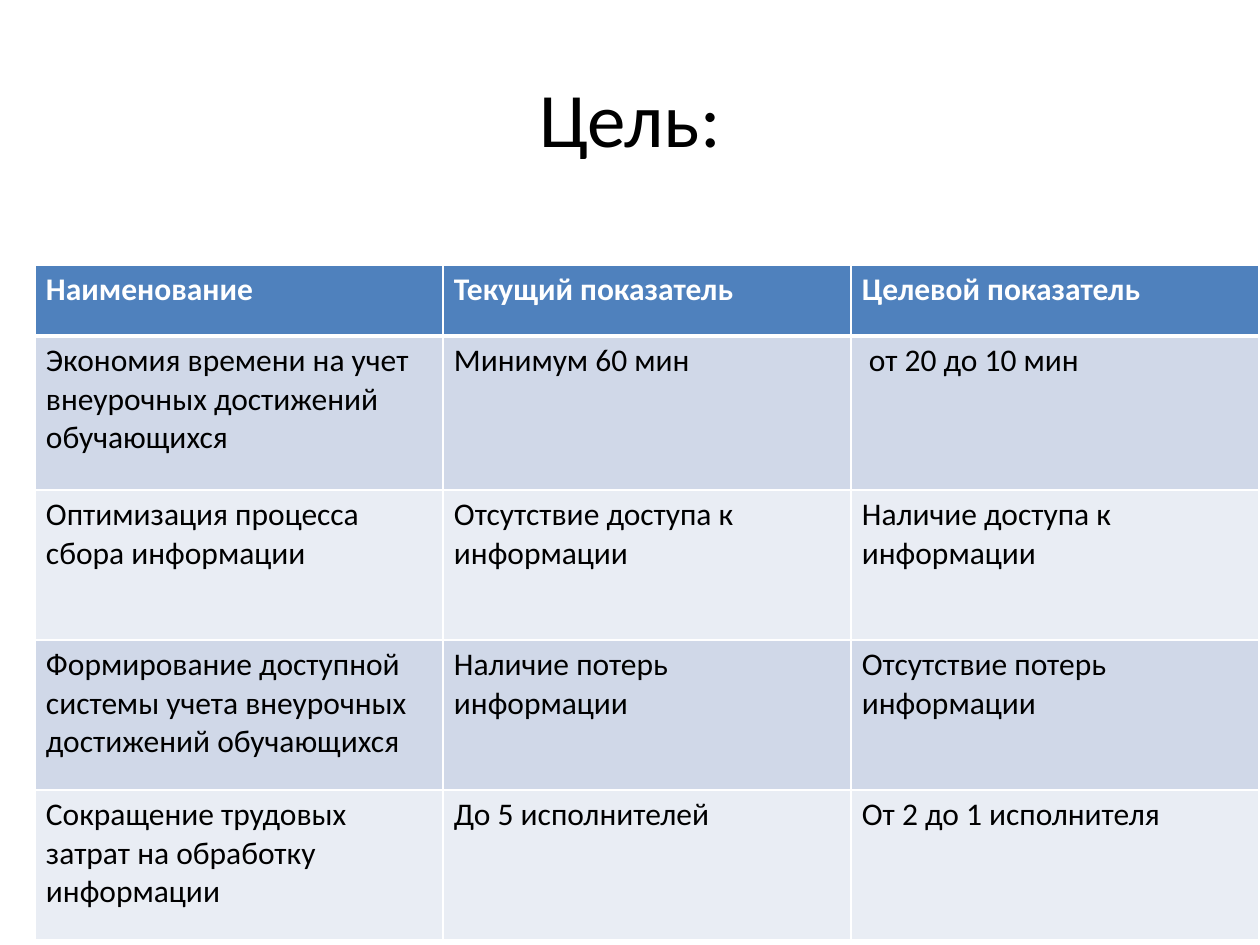
import pptx
import pptx.util
import pptx.dml.color
import pptx.enum.text
import pptx.oxml
import pptx.oxml.ns

TITLE = "Цель:"
GOALS = [
    ("Наименование", "Текущий показатель", "Целевой показатель"),
    ("Экономия времени на учет внеурочных достижений обучающихся",
     "Минимум 60 мин", " от 20 до 10 мин"),
    ("Оптимизация процесса сбора информации",
     "Отсутствие доступа к информации", "Наличие доступа к информации"),
    ("Формирование доступной системы учета внеурочных достижений обучающихся",
     "Наличие потерь информации", "Отсутствие потерь информации"),
    ("Сокращение трудовых затрат на обработку информации",
     "До 5 исполнителей", "От 2 до 1 исполнителя"),
]
TITLE_BOX = (63, 38, 1134, 158)
TABLE_LEFT, TABLE_TOP = 35, 265
COLUMN_WIDTH = 408
ROW_HEIGHTS = [71, 154, 150, 150, 150]
HEADER_FILL = "4F81BD"
BAND_FILLS = ["D0D8E8", "E9EDF4"]
WHITE, BLACK = "FFFFFF", "000000"
FONT = "Calibri"


def px(length):
    return pptx.util.Emu(round(length * 914400 / 126))


def color(value):
    return pptx.dml.color.RGBColor.from_string(value)


def format_text(text_frame, size, font_color, bold=False):
    for paragraph in text_frame.paragraphs:
        for run in paragraph.runs:
            run.font.name = FONT
            run.font.size = pptx.util.Pt(size)
            run.font.bold = bold
            run.font.color.rgb = color(font_color)


def add_border(cell, side, points):
    border = pptx.oxml.parse_xml(
        f'<a:ln{side} {pptx.oxml.ns.nsdecls("a")} w="{points * 12700}">'
        f'<a:solidFill><a:srgbClr val="{WHITE}"/></a:solidFill></a:ln{side}>')
    cell._tc.get_or_add_tcPr().append(border)


def fill_cell(cell, text, row):
    header = row == 0
    cell.text_frame.text = text
    format_text(cell.text_frame, 18, WHITE if header else BLACK, header)
    cell.margin_left = cell.margin_right = px(11)
    cell.margin_top = cell.margin_bottom = px(6)
    for side in "LRTB":
        under_header = (row, side) in [(0, "B"), (1, "T")]
        add_border(cell, side, 3 if under_header else 1)
    cell.fill.solid()
    cell.fill.fore_color.rgb = color(HEADER_FILL if header else BAND_FILLS[(row - 1) % 2])


def main():
    presentation = pptx.Presentation()
    presentation.slide_width, presentation.slide_height = px(1260), px(945)
    slide = presentation.slides.add_slide(presentation.slide_layouts[5])

    title = slide.shapes.title
    title.left, title.top, title.width, title.height = map(px, TITLE_BOX)
    title.text_frame.text = TITLE
    title.text_frame.vertical_anchor = pptx.enum.text.MSO_ANCHOR.MIDDLE
    title.text_frame.paragraphs[0].alignment = pptx.enum.text.PP_ALIGN.CENTER
    format_text(title.text_frame, 44, BLACK)

    columns = len(GOALS[0])
    goals = slide.shapes.add_table(
        len(GOALS), columns, px(TABLE_LEFT), px(TABLE_TOP),
        px(COLUMN_WIDTH * columns), px(sum(ROW_HEIGHTS))).table
    for column in goals.columns:
        column.width = px(COLUMN_WIDTH)
    for row, (texts, height) in enumerate(zip(GOALS, ROW_HEIGHTS)):
        goals.rows[row].height = px(height)
        for column, text in enumerate(texts):
            fill_cell(goals.cell(row, column), text, row)

    presentation.save("out.pptx")


if __name__ == "__main__":
    main()
